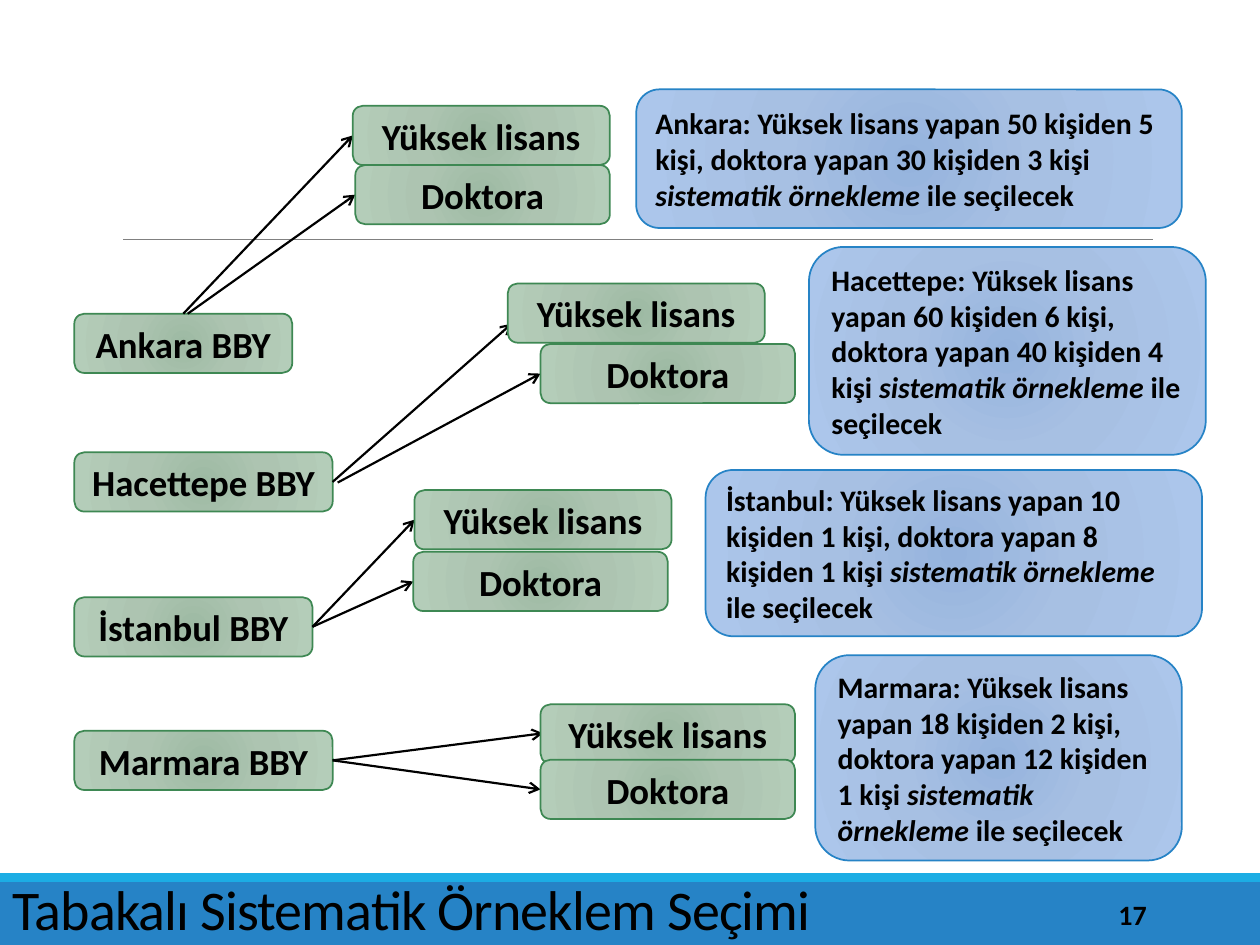
from dataclasses import dataclass
from lxml.etree import SubElement
from pptx import Presentation
from pptx.dml.color import RGBColor
from pptx.enum.shapes import MSO_CONNECTOR as Link, MSO_SHAPE as Form
from pptx.enum.text import MSO_ANCHOR as Anchor, MSO_AUTO_SIZE as Fit, PP_ALIGN as Align
from pptx.oxml import parse_xml
from pptx.oxml.ns import nsdecls, qn
from pptx.util import Pt

PX = 9144  # EMU per px, 100 px to the inch
TOP, LEFT, RIGHT = 0, 1, 3  # connection sites
BOX_H = 47


@dataclass(frozen=True)
class Theme:
    font: str = "Calibri"
    ink: str = "000000"
    bar: str = "2683C6"
    strip: str = "1CADE4"
    rule: str = "808080"
    green: tuple = ("9DBAA3", "ADC4B1", "B4CDB9")
    green_edge: str = "3E8853"
    blue: tuple = ("95B3DD", "A7C0E3", "ACC6EB")
    blue_edge: str = "2683C6"
    title: int = 32
    label: int = 21
    note: int = 17
    page: int = 16


T = Theme()

# Positions are relative to each row's area (left, top, width).
# A link end of None is joined to the middle of the box side.
ROWS = [
    dict(area=(59, 71, 879), name="Ankara", node=(178, 173), side=TOP,
         master=(221, 13, 204), doctor=(223, 60, 202), note=(433, 110),
         counts=(50, 5, 30, 3), links=((None, None), ((90, 178), None))),
    dict(area=(59, 196, 898), name="Hacettepe", node=(163, 205), side=RIGHT,
         master=(344, 29, 204), doctor=(370, 77, 202), note=(315, 165),
         counts=(60, 6, 40, 4), links=((None, (347, 61)), ((209, 187), None))),
    dict(area=(59, 373, 895), name="İstanbul", node=(101, 189), side=RIGHT,
         master=(270, 16, 204), doctor=(269, 65, 202), note=(394, 132),
         counts=(10, 1, 8, 1), links=((None, None), (None, None))),
    dict(area=(59, 520, 879), name="Marmara", node=(60, 205), side=RIGHT,
         master=(370, 39, 202), doctor=(370, 83, 202), note=(291, 163),
         counts=(18, 2, 12, 1), links=((None, (372, 62)), (None, None))),
]


def px(*nums):
    return [round(n * PX) for n in nums]


def style(item, **vals):
    for key, val in vals.items():
        setattr(item, key, val)


def write(frame, runs, size, align=Align.LEFT, anchor=Anchor.MIDDLE, bold=True):
    """Fill a frame with one paragraph of (text, italic) runs."""
    style(frame, word_wrap=True, auto_size=Fit.NONE, vertical_anchor=anchor)
    par = frame.paragraphs[0]
    par.alignment = align
    for text, slant in runs:
        run = par.add_run()
        run.text = text
        style(run.font, name=T.font, size=Pt(size), bold=bold, italic=slant)
        run.font.color.rgb = RGBColor.from_string(T.ink)
    return par


def band(slide, box, color):
    bar = slide.shapes.add_shape(Form.RECTANGLE, *px(*box))
    bar.shadow.inherit = False
    bar.fill.solid()
    bar.fill.fore_color.rgb = RGBColor.from_string(color)
    bar.line.fill.background()


def card(slide, box, tones, edge):
    """Rounded box with a round gradient."""
    shape = slide.shapes.add_shape(Form.ROUNDED_RECTANGLE, *px(*box))
    shape.shadow.inherit = False
    stops = "".join(
        f'<a:gs pos="{pos}"><a:srgbClr val="{tone}"/></a:gs>'
        for pos, tone in zip((0, 45000, 100000), tones))
    fill = parse_xml(
        f'<a:gradFill {nsdecls("a")} rotWithShape="1"><a:gsLst>{stops}</a:gsLst>'
        '<a:path path="circle"><a:fillToRect l="100000" t="100000" '
        'r="100000" b="100000"/></a:path></a:gradFill>')
    shape._element.spPr.find(qn("a:prstGeom")).addnext(fill)
    shape.line.color.rgb = RGBColor.from_string(edge)
    shape.line.width = Pt(1)
    return shape


def label(slide, box, text):
    shape = card(slide, box, T.green, T.green_edge)
    write(shape.text_frame, [(text, None)], T.label, Align.CENTER)
    return shape


def stroke(slide, start, end, color, width):
    line = slide.shapes.add_connector(Link.STRAIGHT, *px(*start, *end))
    line.line.color.rgb = RGBColor.from_string(color)
    line.line.width = Pt(width)
    SubElement(line._element.spPr, qn("a:effectLst"))
    return line


def arrow(slide, node, side, leaf, start, end):
    """Arrow from a node to a leaf, lying behind the leaf."""
    line = stroke(slide, start or (0, 0), end or (0, 0), T.ink, 1.25)
    if start is None:
        line.begin_connect(node, side)
    if end is None:
        line.end_connect(leaf, LEFT)
    SubElement(line.line._get_or_add_ln(), qn("a:tailEnd"), type="arrow")
    leaf._element.addprevious(line._element)


def stratum(slide, area, name, node, side, master, doctor, note, counts, links):
    """One department: its box, two degree boxes, arrows and note."""
    left, top, width = area

    def move(spot):
        return spot and (left + spot[0], top + spot[1])

    # Department and degrees
    root = label(slide, (*move((0, node[0])), node[1], BOX_H), f"{name} BBY")
    leaves = [label(slide, (*move(spot), spot[2], BOX_H), text)
              for spot, text in ((master, "Yüksek lisans"), (doctor, "Doktora"))]
    for leaf, (start, end) in zip(leaves, links):
        arrow(slide, root, side, leaf, move(start), move(end))

    # Sampling note at the right edge
    wide, high = note
    shape = card(slide, (*move((width - wide, 0)), wide, high), T.blue, T.blue_edge)
    all_m, pick_m, all_d, pick_d = counts
    write(shape.text_frame, [
        (f"{name}: Yüksek lisans yapan {all_m} kişiden {pick_m} kişi, "
         f"doktora yapan {all_d} kişiden {pick_d} kişi ", False),
        ("sistematik örnekleme", True),
        (" ile seçilecek", False)], T.note)


def footer(slide, box):
    """Coloured bars with the title and page number."""
    left, top, width, high = box
    band(slide, (left, top + 7, width, high - 7), T.bar)
    band(slide, (left, top, width, 7), T.strip)

    # Title
    title = slide.shapes.title
    x, y, w, h = px(left, top + 13, 900, 47)
    style(title, left=x, top=y, width=w, height=h)
    par = write(title.text_frame, [("Tabakalı Sistematik Örneklem Seçimi", None)],
                T.title, anchor=Anchor.BOTTOM, bold=False)
    style(par, line_spacing=0.85, space_before=Pt(0))
    par.runs[0].font._element.set("spc", "-50")
    slide.shapes._spTree.append(title._element)

    # Page number
    page = slide.shapes.add_textbox(*px(left + 812, top + 13, 108, 40))
    write(page.text_frame, [("17", None)], T.page, Align.RIGHT)


def main():
    deck = Presentation()
    deck.slide_width, deck.slide_height = px(1000, 750)
    slide = deck.slides.add_slide(deck.slide_layouts[5])
    stroke(slide, (98, 190), (915, 190), T.rule, 0.5)
    for row in ROWS:
        stratum(slide, **row)
    footer(slide, (0, 693, 1000, 57))
    deck.save("out.pptx")


if __name__ == "__main__":
    main()
